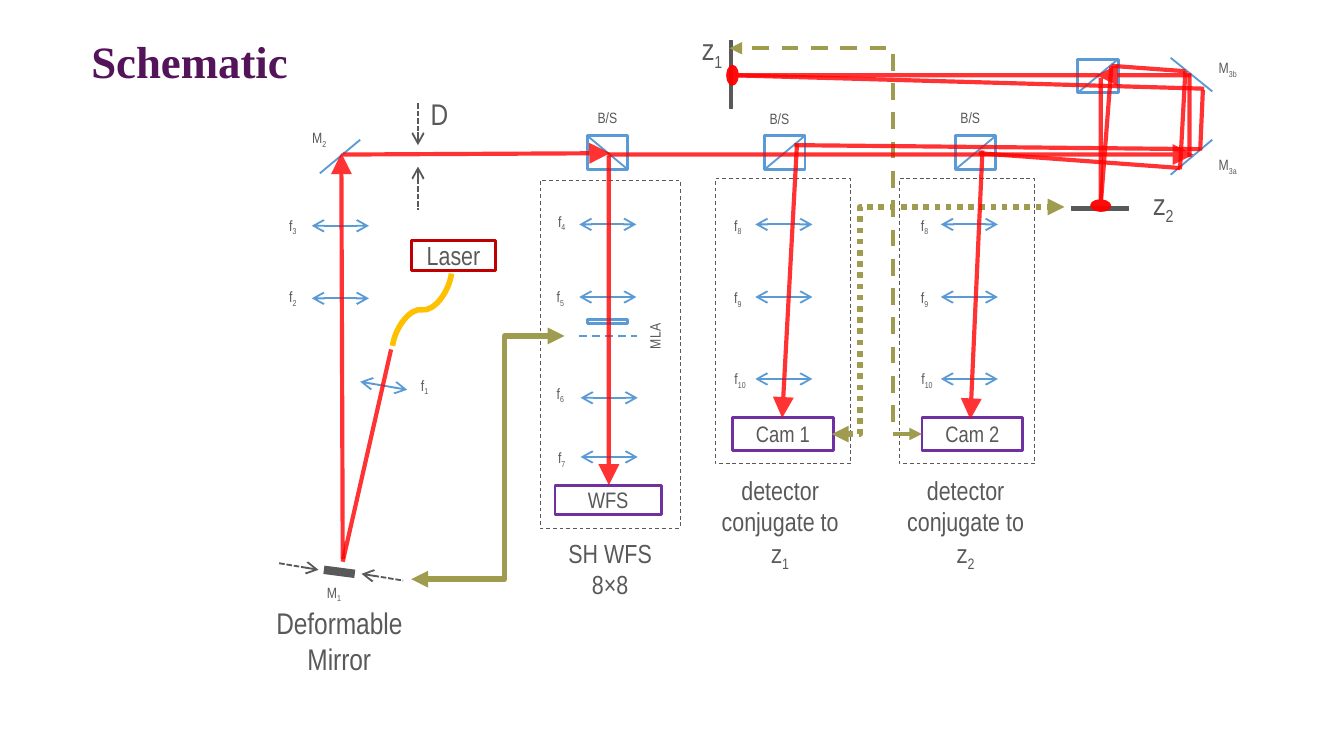
from dataclasses import dataclass
from typing import Optional

from pptx import Presentation
from pptx import util as u
from pptx.dml.color import RGBColor
from pptx.enum import dml, shapes, text
from pptx.oxml.ns import qn
from lxml import etree

GRAY = RGBColor(0x59, 0x59, 0x59)
BLUE = RGBColor(0x5B, 0x9B, 0xD5)
PURPLE = RGBColor(0x70, 0x30, 0xA0)
PLUM = RGBColor(0x54, 0x14, 0x5A)
CRIMSON = RGBColor(0xC0, 0x00, 0x00)
AMBER = RGBColor(0xFF, 0xC0, 0x00)
OLIVE = RGBColor(0x9F, 0x9B, 0x4F)
RED = RGBColor(0xFF, 0x00, 0x00)

DASH = dml.MSO_LINE.DASH
SHORT_DASH = dml.MSO_LINE.SQUARE_DOT
DOTS = dml.MSO_LINE.ROUND_DOT
STRAIGHT = shapes.MSO_CONNECTOR.STRAIGHT
ELBOW = shapes.MSO_CONNECTOR.ELBOW
CURVE = shapes.MSO_CONNECTOR.CURVE
CENTER, LEFT, RIGHT = text.PP_ALIGN.CENTER, text.PP_ALIGN.LEFT, text.PP_ALIGN.RIGHT

SLIDE_WIDTH = u.Inches(10)
SLIDE_HEIGHT = u.Emu(SLIDE_WIDTH * 9 // 16)
CELL = SLIDE_WIDTH // 100  # the grid has 100 columns of square cells


def grid(*cells: float) -> list[u.Emu]:
    return [u.Emu(round(cell * CELL)) for cell in cells]


@dataclass
class Line:
    points: tuple[float, float, float, float]
    color: RGBColor = BLUE
    width: float = 1
    dash: Optional[dml.MSO_LINE] = None
    head: str = ""
    tail: str = ""
    kind: shapes.MSO_CONNECTOR = STRAIGHT
    bend: Optional[float] = None
    rotation: float = 0
    opacity: int = 100
    large_ends: bool = False


@dataclass
class Box:
    area: tuple[float, float, float, float]
    color: RGBColor
    width: float = 1.5
    label: str = ""
    size: int = 12
    dash: Optional[dml.MSO_LINE] = None
    filled: bool = False


@dataclass
class Label:
    area: tuple[float, float, float, float]
    text: str
    sub: str = ""
    size: int = 8
    align: text.PP_ALIGN = CENTER
    wrap: bool = False
    margin: bool = True
    rotation: float = 0
    font: str = "Arial Narrow"
    color: RGBColor = GRAY
    bold: bool = False
    spacing: Optional[float] = None


@dataclass
class CameraArm:
    name: str
    plane: str
    frame: float
    lens: float
    focal: float
    camera: float
    caption: float


def write(frame, label: Label) -> None:
    frame.text = label.text
    if label.sub:
        run = frame.paragraphs[-1].add_run()
        run.text = label.sub
        run._r.get_or_add_rPr().set("baseline", "-25000")
    for paragraph in frame.paragraphs:
        paragraph.alignment = label.align
        paragraph.line_spacing = label.spacing
        for run in paragraph.runs:
            run.font.name, run.font.size = label.font, u.Pt(label.size)
            run.font.color.rgb, run.font.bold = label.color, label.bold


def draw_label(slide, label: Label) -> None:
    shape = slide.shapes.add_textbox(*grid(*label.area))
    shape.rotation = label.rotation
    frame = shape.text_frame
    frame.word_wrap = label.wrap
    if not label.margin:
        frame.margin_left = frame.margin_right = frame.margin_top = frame.margin_bottom = 0
    write(frame, label)


def draw_box(slide, box: Box) -> None:
    shape = slide.shapes.add_shape(shapes.MSO_SHAPE.RECTANGLE, *grid(*box.area))
    shape.shadow.inherit = False
    if box.filled:
        shape.fill.solid()
        shape.fill.fore_color.rgb = box.color
    else:
        shape.fill.background()
    shape.line.color.rgb, shape.line.width = box.color, u.Pt(box.width)
    if box.dash:
        shape.line.dash_style = box.dash
    if box.label:
        shape.text_frame.vertical_anchor = text.MSO_ANCHOR.MIDDLE
        write(shape.text_frame, Label(box.area, box.label, size=box.size))


def draw_line(slide, line: Line) -> None:
    connector = slide.shapes.add_connector(line.kind, *grid(*line.points))
    connector.line.color.rgb, connector.line.width = line.color, u.Pt(line.width)
    if line.dash:
        connector.line.dash_style = line.dash
    properties = connector._element.spPr
    outline = properties.find(qn("a:ln"))
    if line.opacity < 100:
        color = outline.find(".//" + qn("a:srgbClr"))
        etree.SubElement(color, qn("a:alpha"), val=str(line.opacity * 1000))
    for tag, end in (("a:headEnd", line.head), ("a:tailEnd", line.tail)):
        if end:
            mark = etree.SubElement(outline, qn(tag), type=end)
            if line.large_ends:
                mark.set("w", "lg")
                mark.set("len", "med" if end == "oval" else "lg")
    if line.bend is not None:
        guides = properties.find(qn("a:prstGeom")).find(qn("a:avLst"))
        etree.SubElement(guides, qn("a:gd"), name="adj1", fmla=f"val {round(line.bend * 100000)}")
    if line.rotation:
        properties.find(qn("a:xfrm")).set("rot", str(round(line.rotation * 60000)))
    etree.SubElement(properties, qn("a:effectLst"))


def draw_lens(slide, left: float, row: float, drop: float = 0, span: float = 4.25) -> None:
    draw_line(slide, Line((left, row, left + span, row + drop), head="arrow", tail="arrow"))


def draw_splitter(slide, left: float, top: float, rising: bool = True) -> None:
    draw_box(slide, Box((left, top, 3, 2.5), BLUE))
    start, end = (top + 2.5, top) if rising else (top, top + 2.5)
    draw_line(slide, Line((left, start, left + 3, end)))


def draw_camera_arm(slide, arm: CameraArm) -> None:
    draw_box(slide, Box((arm.frame, 13.3, 10.1, 21.2), GRAY, 0.5, dash=DASH))
    for number, row, label_row, width in (("8", 16.7, 15.6, 2.6), ("9", 22.1, 21, 2.6),
                                          ("10", 28.2, 27, 2.95)):
        draw_lens(slide, arm.lens, row)
        draw_label(slide, Label((arm.focal, label_row, width, 2.4), "f", number))
    draw_box(slide, Box((arm.camera, 31.1, 7.5, 2.4), PURPLE, label=arm.name))
    draw_label(slide, Label((arm.caption, 34.8, 10.7, 8.1), "detector conjugate to z",
                            arm.plane, 14, wrap=True))


def beam(*points: float, head: str = "", tail: str = "") -> Line:
    return Line(points, RED, 2.25, head=head, tail=tail, opacity=80, large_ends=True)


ARMS = [CameraArm("Cam 1", "1", 53.2, 56.2, 53.6, 54.5, 52.7),
        CameraArm("Cam 2", "2", 66.9, 70, 67.5, 68.6, 66.5)]

BOXES = [
    Box((40.2, 13.4, 10.4, 25.9), GRAY, 0.5, dash=DASH),  # wavefront sensor frame
    Box((43.7, 23.8, 3, 0.3), BLUE),  # lenslet array
    Box((41.3, 36.1, 7.9, 2.2), PURPLE, label="WFS"),
    Box((30.6, 17.9, 6.3, 2.2), CRIMSON, label="Laser", size=14),
    Box((54.3, 3, 0.2, 5.1), GRAY, 0.5, filled=True),  # plane z1
    Box((79.75, 15.35, 4.2, 0.3), GRAY, 0.5, filled=True),  # plane z2
]

# Lenses f2 to f7: left, row, then label position
LENSES = [("2", 23.2, 22.2, 20.5, 20.9), ("3", 23.2, 16.8, 20.5, 15.6),
          ("4", 43.1, 16.7, 40.5, 15.3), ("5", 43.1, 22.1, 40.4, 20.9),
          ("6", 43.2, 29.6, 40.4, 28.1), ("7", 43.2, 34, 40.5, 32.9)]

LABELS = [
    Label((6.8, 3, 86.4, 9.4), "Schematic", size=24, align=LEFT, wrap=True, margin=False,
          font="Times New Roman", color=PLUM, bold=True, spacing=0.9),
    Label((30.3, 27.5, 2.6, 2.4), "f", "1"),
    Label((23.3, 42.9, 3.1, 2.4), "M", "1"),
    Label((22.2, 9.1, 3.1, 2.4), "M", "2"),
    Label((89.6, 11.1, 3.5, 2.4), "M", "3a"),
    Label((89.6, 3.9, 3.5, 2.4), "M", "3b"),
    Label((43.4, 7.6, 3.6, 2.4), "B/S"),
    Label((56.2, 7.7, 3.6, 2.4), "B/S"),
    Label((70.4, 7.6, 3.6, 2.4), "B/S"),
    Label((46.8, 23.8, 3.9, 2.4), "MLA", align=LEFT, rotation=270),
    Label((31, 6.6, 3.4, 3.7), "D", size=16),
    Label((51.7, 2.3, 2.6, 2.7), "z", "1", 16, wrap=True, margin=False),
    Label((84.1, 13.3, 4.2, 3.7), "z", "2", 16, RIGHT, wrap=True),
    Label((19.5, 44.5, 11.5, 6.4), "Deformable\vMirror", size=16),
    Label((40.2, 39.5, 10.4, 5.7), "SH WFS\n8×8", size=14, wrap=True),
]

LINES = [
    # Flat mirrors M2, M3a, M3b and the lenslet focal plane
    Line((23.8, 12.9, 26.8, 10.4)),
    Line((87.1, 13, 90.2, 10.4)),
    Line((90.2, 6.8, 87.1, 4.3)),
    Line((43.1, 25, 47.4, 25), dash=DASH),
    # Laser fibre
    Line((28.4, 21.3, 34.4, 24.8), AMBER, 3, kind=CURVE, bend=0.5, rotation=99),
    # Aperture D and deformable mirror
    Line((31.1, 7.7, 31.1, 10.8), GRAY, dash=SHORT_DASH, tail="arrow"),
    Line((31.1, 12.4, 31.1, 15.6), GRAY, dash=SHORT_DASH, head="arrow"),
    Line((23.7, 42.4, 20.7, 41.9), GRAY, dash=SHORT_DASH, head="arrow"),
    Line((24.1, 42.4, 26.4, 42.7), GRAY, 4.5),
    Line((26.9, 42.7, 30, 43.2), GRAY, dash=SHORT_DASH, head="arrow"),
    # Conjugate planes
    Line((68.6, 32.3, 54.3, 3.6), OLIVE, 2.25, DASH, "triangle", "triangle", ELBOW, 0.15),
    Line((61.9, 32.3, 79.2, 15.4), OLIVE, 3, DOTS, "triangle", "triangle", ELBOW, 0.12),
    Line((30.6, 43.1, 42, 25), OLIVE, 3, None, "triangle", "triangle", ELBOW, 0.61),
    # Beam from the laser to the wavefront sensor
    beam(29.1, 26, 25.5, 41.8),
    beam(25.4, 11.4, 25.5, 41.6, head="triangle"),
    beam(25.5, 11.5, 45.4, 11.4, tail="triangle"),
    beam(45.3, 11.6, 45.3, 36.1, tail="triangle"),
    # Beam to plane z1 and back to camera 1
    beam(45.2, 11.5, 88.8, 11.5, tail="triangle"),
    beam(88.5, 5.5, 88.5, 11.7),
    beam(88.6, 5.6, 81.6, 5.6, tail="triangle"),
    beam(81.8, 5.6, 54.5, 5.6, tail="oval"),
    beam(54.5, 5.6, 89.6, 6.6, head="oval"),
    beam(89.5, 6.7, 89.3, 11.2),
    beam(59.1, 10.8, 89.3, 11.1),
    beam(59.3, 10.7, 58.2, 31.1, tail="triangle"),
    # Beam to plane z2 and back to camera 2
    beam(81.9, 5.8, 81.9, 15.3, tail="oval"),
    beam(81.9, 15.3, 82.7, 4.9, head="oval"),
    beam(82.7, 4.9, 88.2, 5.3),
    beam(87.8, 12.6, 88.2, 5.3),
    beam(87.8, 12.5, 72.8, 11.4),
    beam(73.1, 11.2, 72.2, 31.2, tail="triangle"),
]


def main() -> None:
    presentation = Presentation()
    presentation.slide_width, presentation.slide_height = SLIDE_WIDTH, SLIDE_HEIGHT
    slide = presentation.slides.add_slide(presentation.slide_layouts[6])
    for label in LABELS:
        draw_label(slide, label)
    for box in BOXES:
        draw_box(slide, box)
    for number, left, row, label_left, label_top in LENSES:
        draw_lens(slide, left, row)
        draw_label(slide, Label((label_left, label_top, 2.6, 2.4), "f", number))
    draw_lens(slide, 26.8, 28.4, drop=0.6, span=3.5)
    for arm in ARMS:
        draw_camera_arm(slide, arm)
    draw_splitter(slide, 43.7, 10.1, rising=False)
    for left, top in ((56.9, 10.1), (71.1, 10.1), (80.2, 4.4)):
        draw_splitter(slide, left, top)
    for line in LINES:
        draw_line(slide, line)
    presentation.save("out.pptx")


if __name__ == "__main__":
    main()
